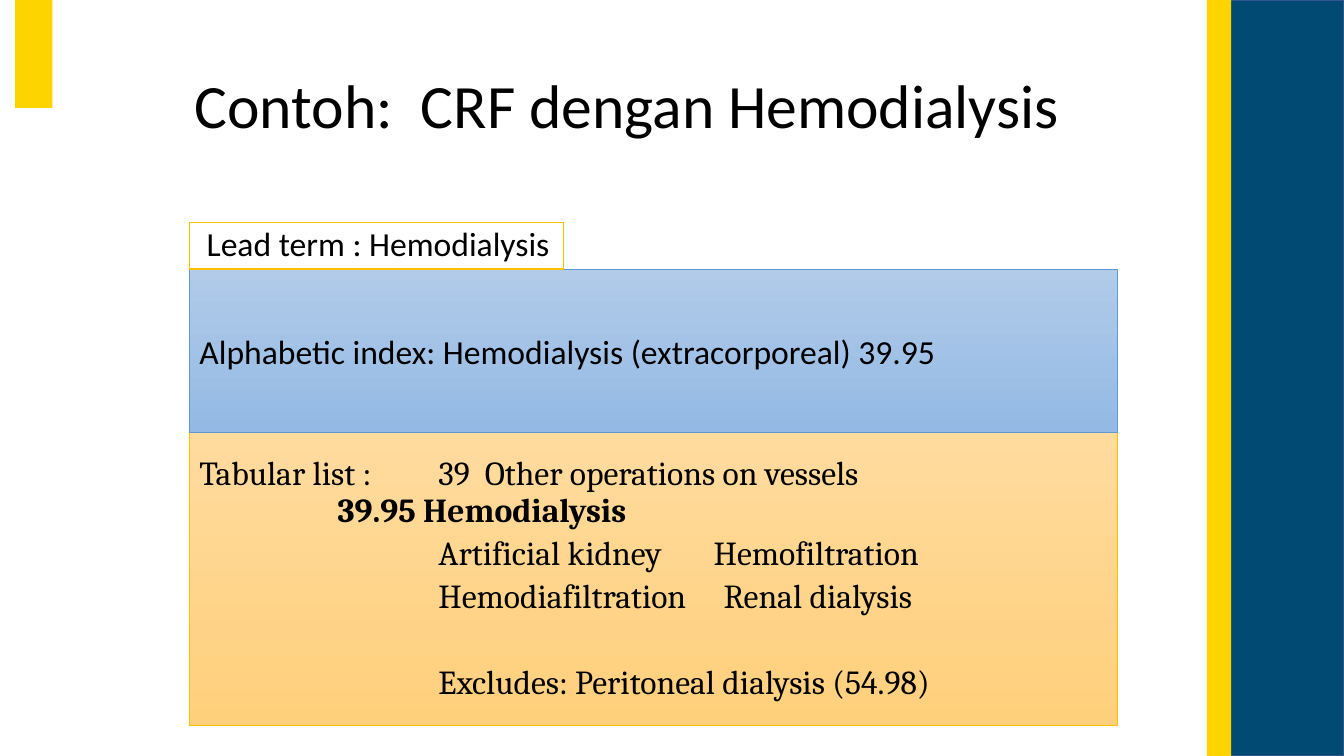
from lxml import etree
from pptx import Presentation
from pptx.dml.color import RGBColor
from pptx.enum.shapes import MSO_SHAPE
from pptx.enum.text import MSO_ANCHOR, PP_ALIGN
from pptx.oxml.ns import qn
from pptx.util import Inches, Pt

RECT = MSO_SHAPE.RECTANGLE
MIDDLE = MSO_ANCHOR.MIDDLE
LEFT = PP_ALIGN.LEFT

YELLOW = "FDD300"
NAVY = "004A74"
AMBER = "FFC000"


def rgb(value):
    return RGBColor.from_string(value)


def add_box(slide, box, fill, line=None, line_width=0.5):
    sp = slide.shapes.add_shape(RECT, *map(Inches, box))
    sp.shadow.inherit = False
    if isinstance(fill, tuple):
        sp.fill.gradient()
        sp.fill.gradient_angle = 270
        for stop, color in zip(sp.fill.gradient_stops, fill):
            stop.color.rgb = rgb(color)
    else:
        sp.fill.solid()
        sp.fill.fore_color.rgb = rgb(fill)
    if line:
        sp.line.color.rgb = rgb(line)
        sp.line.width = Pt(line_width)
    else:
        sp.line.fill.background()
    tf = sp.text_frame
    tf.word_wrap = True
    tf.vertical_anchor = MIDDLE
    return sp


def add_text(p, text, font="Calibri", size=24, bold=False, spacing=0.9, before=0, tabs=()):
    p.alignment = LEFT
    p.line_spacing = spacing
    p.space_before = Pt(before)
    if tabs:
        tab_list = etree.SubElement(p._p.get_or_add_pPr(), qn("a:tabLst"))
        for position in tabs:
            etree.SubElement(tab_list, qn("a:tab"), pos=str(Inches(position)), algn="l")
    r = p.add_run()
    r.text = text
    r.font.name = font
    r.font.size = Pt(size)
    r.font.bold = bold
    r.font.color.rgb = rgb("000000")


def add_decoration(slide, width, height):
    add_box(slide, (0.15, 0, 0.37, 1.07), YELLOW)
    add_box(slide, (width - 1.15, 0, 1.15, height), NAVY, "325491", 1)
    add_box(slide, (width - 1.36, 0, 0.24, height), YELLOW)


def add_title(slide, box):
    title = slide.shapes.title
    title.left, title.top, title.width, title.height = map(Inches, box)
    tf = title.text_frame
    tf.vertical_anchor = MIDDLE
    add_text(tf.paragraphs[0], "Contoh:  CRF dengan Hemodialysis", size=44)


def add_tabular_list(slide, box):
    sp = add_box(slide, box, ("FFDB9E", "FFD07C"), AMBER)
    entry = 2.37
    rows = [
        ("Tabular list :\t39  Other operations on vessels", False, 0, (entry,)),
        ("\t39.95 Hemodialysis", True, 0, (1.37,)),
        ("\tArtificial kidney\tHemofiltration", False, 4.8, (entry, 5.1)),
        ("\tHemodiafiltration\tRenal dialysis", False, 4.8, (entry, 5.2)),
        ("\tExcludes: Peritoneal dialysis (54.98)", False, 35.5, (entry,)),
    ]
    tf = sp.text_frame
    for i, (text, bold, before, tabs) in enumerate(rows):
        p = tf.add_paragraph() if i else tf.paragraphs[0]
        add_text(p, text, font="Cambria", bold=bold, before=before, tabs=tabs)


def add_alphabetic_index(slide, box):
    sp = add_box(slide, box, ("B1CBE9", "93B9E4"), "5B9BD5")
    add_text(sp.text_frame.paragraphs[0],
             "Alphabetic index: Hemodialysis (extracorporeal) 39.95", spacing=1.0)


def add_lead_term(slide, box):
    sp = add_box(slide, box, "FFFFFF", AMBER, 1)
    tf = sp.text_frame
    tf.word_wrap = False
    tf.margin_left = Inches(0.17)
    add_text(tf.paragraphs[0], "Lead term : Hemodialysis")


def add_coding_panel(slide, box):
    left, top, width, height = box
    lead_height, index_height = 0.46, 1.62
    index_top = top + lead_height
    list_top = index_top + index_height
    add_tabular_list(slide, (left, list_top, width, top + height - list_top))
    add_alphabetic_index(slide, (left, index_top, width, index_height))
    add_lead_term(slide, (left, top, 3.71, lead_height))


def main():
    width, height = 13.33, 7.5
    prs = Presentation()
    prs.slide_width, prs.slide_height = Inches(width), Inches(height)
    slide = prs.slides.add_slide(prs.slide_layouts[5])
    add_decoration(slide, width, height)
    add_title(slide, (1.83, 0.35, 11.5, 1.45))
    add_coding_panel(slide, (1.88, 2.21, 9.2, 4.99))
    prs.save("out.pptx")


if __name__ == "__main__":
    main()
